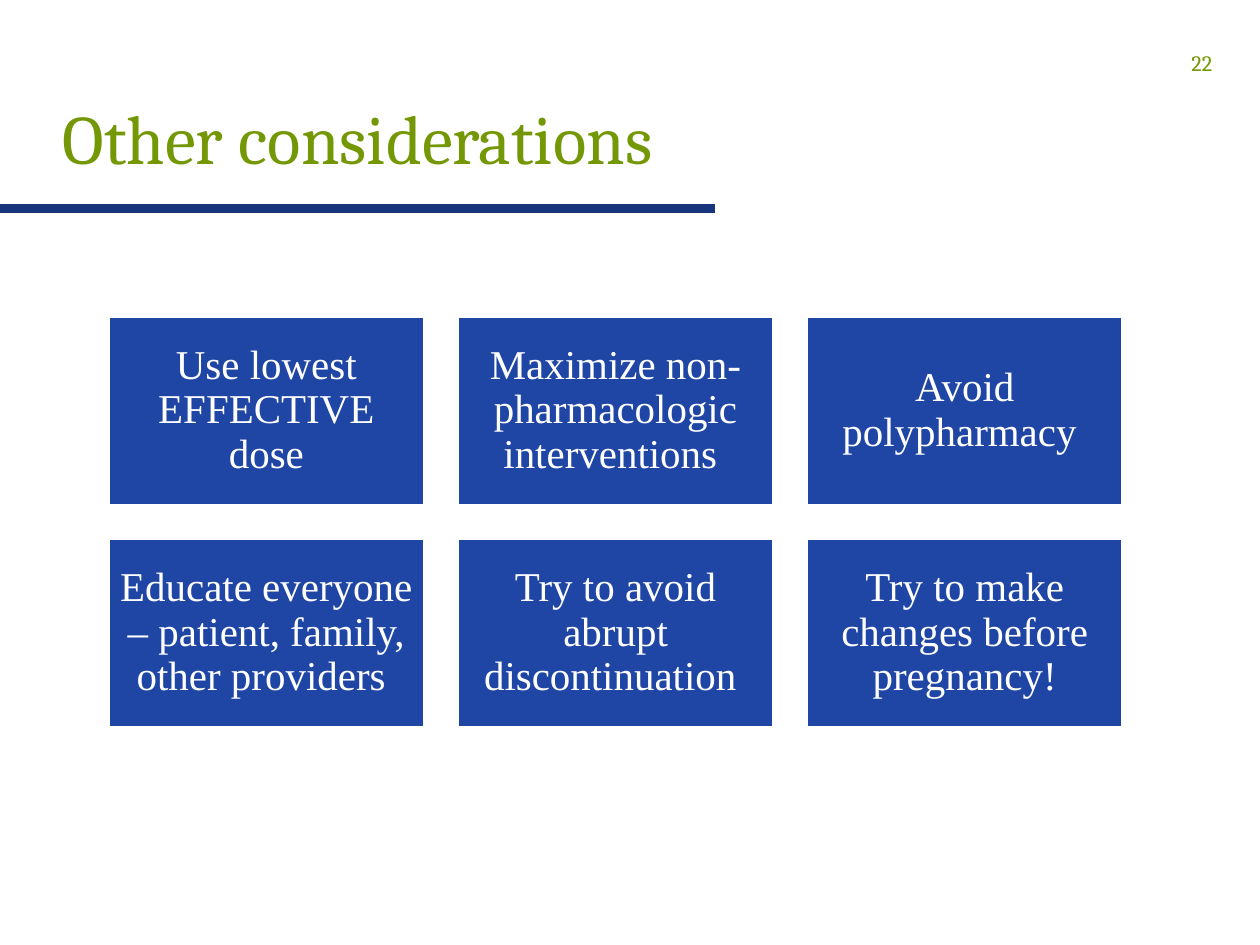
from pptx import Presentation
from pptx.dml.color import RGBColor
from pptx.enum.shapes import MSO_CONNECTOR, MSO_SHAPE
from pptx.enum.text import MSO_ANCHOR, PP_ALIGN
from pptx.oxml.ns import qn
from pptx.util import Pt
from lxml import etree

TITLE = "Other considerations"
PAGE_NUMBER = "22"
CONSIDERATIONS = [
    "Use lowest EFFECTIVE dose",
    "Maximize non-pharmacologic interventions ",
    "Avoid polypharmacy ",
    "Educate everyone – patient, family, other providers ",
    "Try to avoid abrupt discontinuation ",
    "Try to make changes before pregnancy!",
]

COLORS = {"green": "749805", "navy": "18347C", "blue": "2046A5", "white": "FFFFFF"}
HEADING_FONT = "Cambria"
BODY_FONT = "Times New Roman"
LEFT, CENTER, RIGHT = PP_ALIGN.LEFT, PP_ALIGN.CENTER, PP_ALIGN.RIGHT
MIDDLE, BOTTOM = MSO_ANCHOR.MIDDLE, MSO_ANCHOR.BOTTOM
RECTANGLE = MSO_SHAPE.RECTANGLE
STRAIGHT = MSO_CONNECTOR.STRAIGHT

COLUMNS = 3
GRID_LEFT, GRID_TOP = 68.4, 200.2
BOX_WIDTH, BOX_HEIGHT, GAP = 201.6, 121, 20.1


def rgb(name):
    return RGBColor.from_string(COLORS[name])


def set_text(sp, text, font, size, color, align, anchor, inset_x, inset_y):
    tf = sp.text_frame
    tf.word_wrap = True
    tf.vertical_anchor = anchor
    tf.margin_left = tf.margin_right = Pt(inset_x)
    tf.margin_top = tf.margin_bottom = Pt(inset_y)
    tf.text = text
    p = tf.paragraphs[0]
    p.alignment = align
    r = p.runs[0]
    r.font.name = font
    r.font.size = Pt(size)
    r.font.color.rgb = rgb(color)
    return p


def add_rule(s):
    line = s.shapes.add_connector(STRAIGHT, Pt(0), Pt(132.5), Pt(454.3), Pt(132.5))
    line.line.color.rgb = rgb("navy")
    line.line.width = Pt(6)
    etree.SubElement(line._element.spPr, qn("a:effectLst"))


def add_headings(s):
    title = s.shapes.add_textbox(Pt(40), Pt(24), Pt(714), Pt(90))
    set_text(title, TITLE, HEADING_FONT, 44, "green", LEFT, BOTTOM, 0, 0.7)
    number = s.shapes.add_textbox(Pt(724.3), Pt(24), Pt(53.3), Pt(31.7))
    set_text(number, PAGE_NUMBER, HEADING_FONT, 14, "green", RIGHT, MIDDLE, 7.9, 4)


def add_considerations(s):
    for i, text in enumerate(CONSIDERATIONS):
        row, col = divmod(i, COLUMNS)
        x = GRID_LEFT + col * (BOX_WIDTH + GAP)
        y = GRID_TOP + row * (BOX_HEIGHT + GAP)
        sp = s.shapes.add_shape(RECTANGLE, Pt(x), Pt(y), Pt(BOX_WIDTH), Pt(BOX_HEIGHT))
        sp.shadow.inherit = False
        sp.fill.solid()
        sp.fill.fore_color.rgb = rgb("blue")
        sp.line.color.rgb = rgb("white")
        sp.line.width = Pt(3)
        p = set_text(sp, text, BODY_FONT, 26, "white", CENTER, MIDDLE, 7.8, 7.8)
        p.line_spacing = 0.9


def main():
    prs = Presentation()
    prs.slide_width, prs.slide_height = Pt(800), Pt(600)
    s = prs.slides.add_slide(prs.slide_layouts[6])
    add_rule(s)
    add_headings(s)
    add_considerations(s)
    prs.save("out.pptx")


if __name__ == "__main__":
    main()
